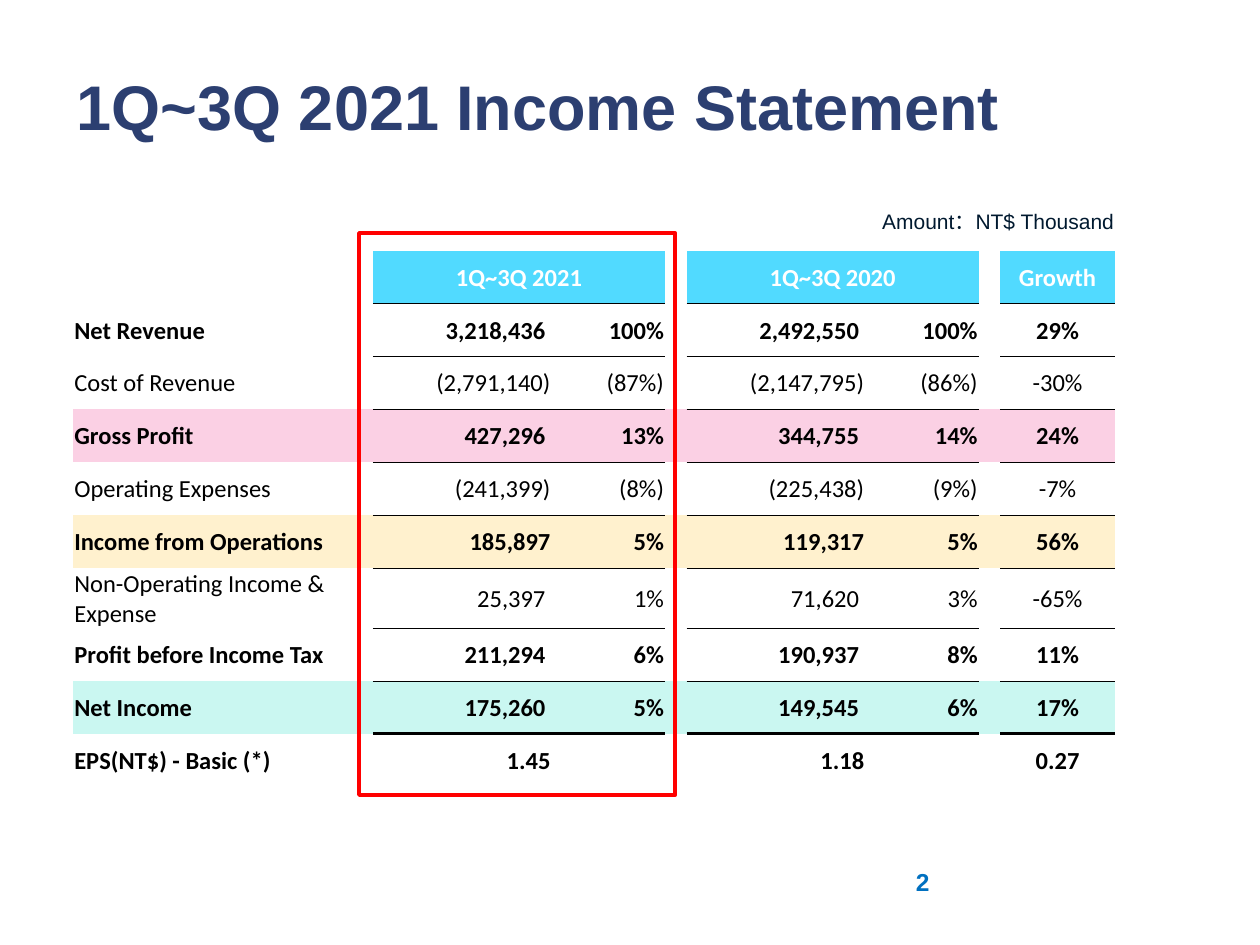
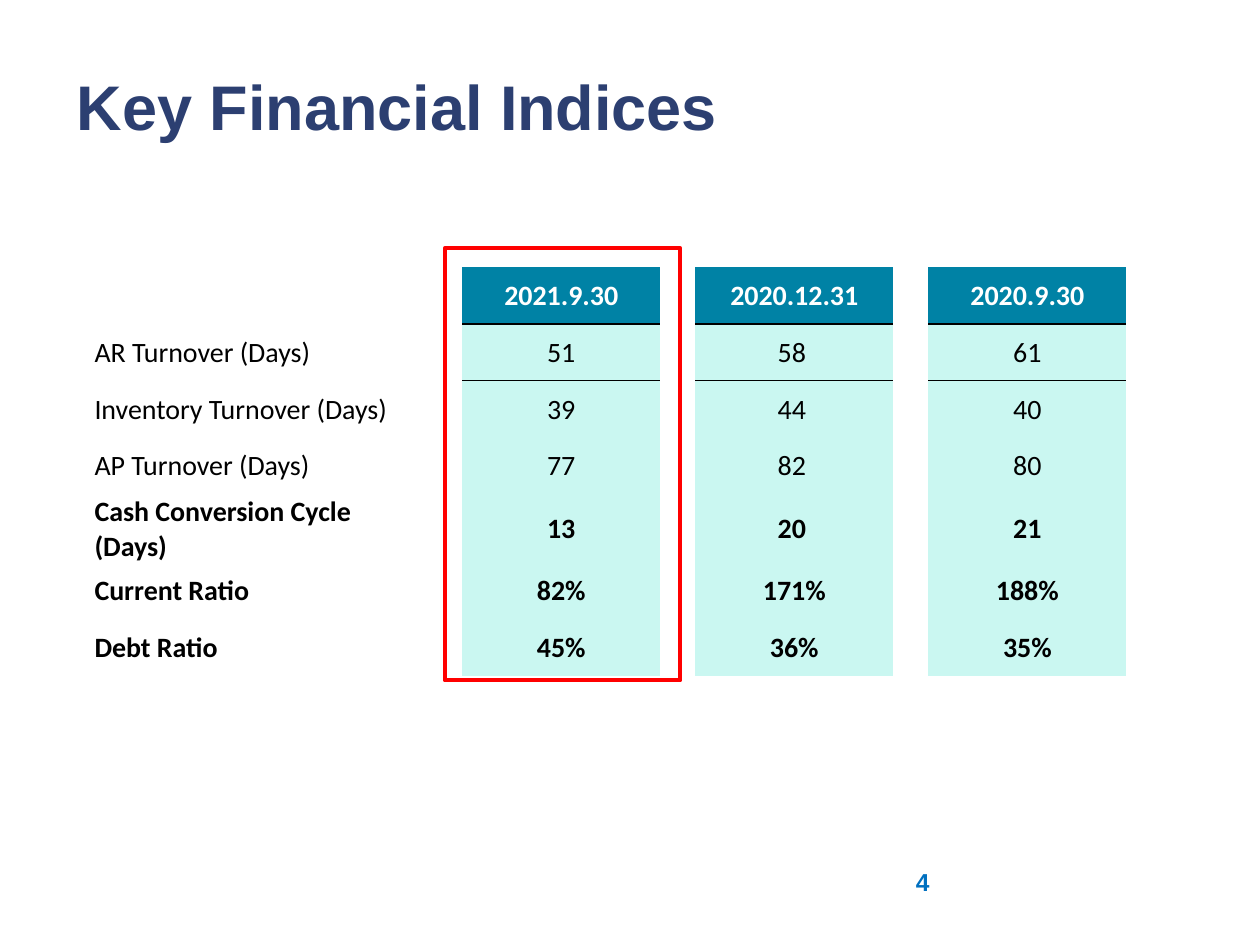
"""Build two financial result slides: an income statement and key indices."""
from dataclasses import dataclass
from typing import Optional

from lxml import etree
from pptx import Presentation
from pptx.dml.color import RGBColor
from pptx.enum import shapes, text
from pptx.oxml import ns
from pptx.util import Inches, Pt

NAVY = RGBColor(0x2C, 0x3F, 0x71)
INK = RGBColor(0x00, 0x19, 0x2F)
BLUE = RGBColor(0x00, 0x70, 0xC0)
SKY = RGBColor(0x51, 0xDA, 0xFF)
TEAL = RGBColor(0x00, 0x82, 0xA5)
MINT = RGBColor(0xCA, 0xF7, 0xF1)
PINK = RGBColor(0xFB, 0xD0, 0xE4)
CREAM = RGBColor(0xFF, 0xF1, 0xCE)
RED = RGBColor(0xFF, 0x00, 0x00)
BLACK = RGBColor(0x00, 0x00, 0x00)
WHITE = RGBColor(0xFF, 0xFF, 0xFF)

LEFT, CENTER, RIGHT = text.PP_ALIGN.LEFT, text.PP_ALIGN.CENTER, text.PP_ALIGN.RIGHT
PLAIN_STYLE = "{2D5ABB26-0587-4C30-8999-92F81FD0307C}"
TITLE_BOX = (0.51, 0.21, 8.58, 1.25)
NUMBER_BOX = (7.17, 6.83, 2.33, 0.52)


@dataclass
class Row:
    """One table row; rule is the width in points of the line below it."""
    label: str
    values: tuple
    bold: bool = False
    fill: Optional[RGBColor] = None
    rule: float = 0
    padded: bool = False
    full_width: bool = False
    color: RGBColor = BLACK
    header: bool = False


@dataclass
class Grid:
    """Column layout of a table."""
    widths: tuple
    row_height: float
    value_columns: tuple
    right_columns: tuple
    padded_columns: tuple
    size: int


INCOME_GRID = Grid((2.38, 1.42, 0.9, 0.17, 1.42, 0.9, 0.17, 0.91), 0.42,
                   (1, 2, 4, 5, 7), (1, 2, 4, 5), (1, 4), 14)
INCOME_ROWS = [
    Row("", ("1Q~3Q 2021", "", "1Q~3Q 2020", "", "Growth"), True, SKY, 1,
        color=WHITE, header=True),
    Row("Net Revenue", ("3,218,436", "100%", "2,492,550", "100%", "29%"), True, padded=True),
    Row("Cost of Revenue", ("(2,791,140)", "(87%)", "(2,147,795)", "(86%)", "-30%"), rule=0.5),
    Row("Gross Profit", ("427,296", "13%", "344,755", "14%", "24%"), True, PINK,
        padded=True, full_width=True),
    Row("Operating Expenses", ("(241,399)", "(8%)", "(225,438)", "(9%)", "-7%"), rule=0.5),
    Row("Income from Operations", ("185,897", "5%", "119,317", "5%", "56%"), True, CREAM,
        full_width=True),
    Row("Non-Operating Income & Expense", ("25,397", "1%", "71,620", "3%", "-65%"),
        rule=0.5, padded=True),
    Row("Profit before Income Tax", ("211,294", "6%", "190,937", "8%", "11%"), True,
        rule=0.5, padded=True),
    Row("Net Income", ("175,260", "5%", "149,545", "6%", "17%"), True, MINT, 2,
        padded=True, full_width=True),
    Row("EPS(NT$) - Basic (*)", ("1.45", "", "1.18", "", "0.27"), True),
]

INDEX_GRID = Grid((2.66, 0.27, 1.57, 0.28, 1.57, 0.28, 1.57), 0.45, (2, 4, 6), (), (4,), 16)
INDEX_ROWS = [
    Row("", ("2021.9.30", "2020.12.31", "2020.9.30"), True, TEAL, 1, color=WHITE, header=True),
    Row("AR Turnover (Days)", ("51", "58", "61"), fill=MINT, padded=True),
    Row("Inventory Turnover (Days)", ("39", "44", "40"), fill=MINT, padded=True),
    Row("AP Turnover (Days)", ("77", "82", "80"), fill=MINT, padded=True),
    Row("Cash Conversion Cycle (Days)", ("13", "20", "21"), True, MINT, padded=True),
    Row("Current Ratio", ("82%", "171%", "188%"), True, MINT),
    Row("Debt Ratio", ("45%", "36%", "35%"), True, MINT),
]


def write(para, words, size, color, bold=False, font="Arial", align=LEFT):
    """Add one formatted run to a paragraph."""
    para.alignment = align
    span = para.add_run()
    span.text = words
    span.font.name, span.font.size, span.font.bold = font, Pt(size), bold
    span.font.color.rgb = color


def place_text(page, box, words, size, color, bold=False, align=LEFT):
    """Place a wrapping text box."""
    frame = page.shapes.add_textbox(*map(Inches, box)).text_frame
    frame.word_wrap = True
    write(frame.paragraphs[0], words, size, color, bold, align=align)


def start_page(deck, title, number):
    """Add a slide with its title and page number."""
    page = deck.slides.add_slide(deck.slide_layouts[5])
    heading = page.shapes.title
    heading.left, heading.top, heading.width, heading.height = map(Inches, TITLE_BOX)
    heading.text_frame.vertical_anchor = text.MSO_ANCHOR.MIDDLE
    write(heading.text_frame.paragraphs[0], title, 36, NAVY, True)
    place_text(page, NUMBER_BOX, number, 14, BLUE, True)
    return page


def draw_rule(cell, side, width):
    """Draw a black border on the top (lnT) or bottom (lnB) of a cell."""
    line = etree.Element(ns.qn(f"a:{side}"), w=str(Pt(width)))
    fill = etree.SubElement(line, ns.qn("a:solidFill"))
    etree.SubElement(fill, ns.qn("a:srgbClr"), val=str(BLACK))
    cell._tc.get_or_add_tcPr().insert(0, line)


def format_cell(cell, row, column, grid, rule_above):
    """Fill, write and rule one table cell."""
    is_value = column in grid.value_columns
    cell.margin_left = cell.margin_top = cell.margin_right = Inches(0.01)
    cell.margin_bottom = 0
    cell.vertical_anchor = text.MSO_ANCHOR.MIDDLE
    if row.fill and (is_value or row.full_width):
        cell.fill.solid()
        cell.fill.fore_color.rgb = row.fill
    else:
        cell.fill.background()
    if row.padded and column in grid.padded_columns:
        cell.margin_right = Inches(0.05)
    words, align = "", LEFT
    if is_value:
        words = row.values[grid.value_columns.index(column)]
        align = RIGHT if column in grid.right_columns and not row.header else CENTER
        for side, width in (("lnB", row.rule), ("lnT", rule_above)):
            if width:
                draw_rule(cell, side, width)
    elif column == 0:
        words = row.label
    if words:
        write(cell.text_frame.paragraphs[0], words, grid.size, row.color, row.bold,
              "Calibri", align)


def place_table(page, left, top, grid, rows):
    """Place a financial table and return it."""
    box = (left, top, sum(grid.widths), grid.row_height * len(rows))
    frame = page.shapes.add_table(len(rows), len(grid.widths), *map(Inches, box))
    table = frame.table
    table.first_row = table.horz_banding = False
    next(frame._element.iter(ns.qn("a:tableStyleId"))).text = PLAIN_STYLE
    for column, width in zip(table.columns, grid.widths):
        column.width = Inches(width)
    rule_above = 0
    for index, row in enumerate(rows):
        table.rows[index].height = Inches(grid.row_height)
        for column in range(len(grid.widths)):
            format_cell(table.cell(index, column), row, column, grid, rule_above)
        rule_above = row.rule
    return table


def place_highlight(page, box):
    """Outline the current period in red."""
    outline = page.shapes.add_shape(shapes.MSO_SHAPE.RECTANGLE, *map(Inches, box))
    outline.shadow.inherit = False
    outline.fill.background()
    outline.line.color.rgb = RED
    outline.line.width = Pt(2.25)


def build_income_statement(deck):
    """Build the income statement slide."""
    page = start_page(deck, "1Q~3Q 2021 Income Statement", "2")
    place_text(page, (6.65, 1.61, 2.29, 0.3), "Amount：NT$ Thousand", 12, INK, align=RIGHT)
    table = place_table(page, 0.58, 1.99, INCOME_GRID, INCOME_ROWS)
    for column in INCOME_GRID.padded_columns:
        table.cell(0, column).merge(table.cell(0, column + 1))
    place_highlight(page, (2.85, 1.85, 2.51, 4.46))


def build_key_indices(deck):
    """Build the key financial indices slide."""
    page = start_page(deck, "Key Financial Indices", "4")
    place_table(page, 0.74, 2.12, INDEX_GRID, INDEX_ROWS)
    place_highlight(page, (3.53, 1.97, 1.87, 3.43))


def main():
    """Build and save the deck."""
    deck = Presentation()
    deck.slide_width, deck.slide_height = Inches(10), Inches(7.5)
    build_income_statement(deck)
    build_key_indices(deck)
    deck.save("out.pptx")


if __name__ == "__main__":
    main()
